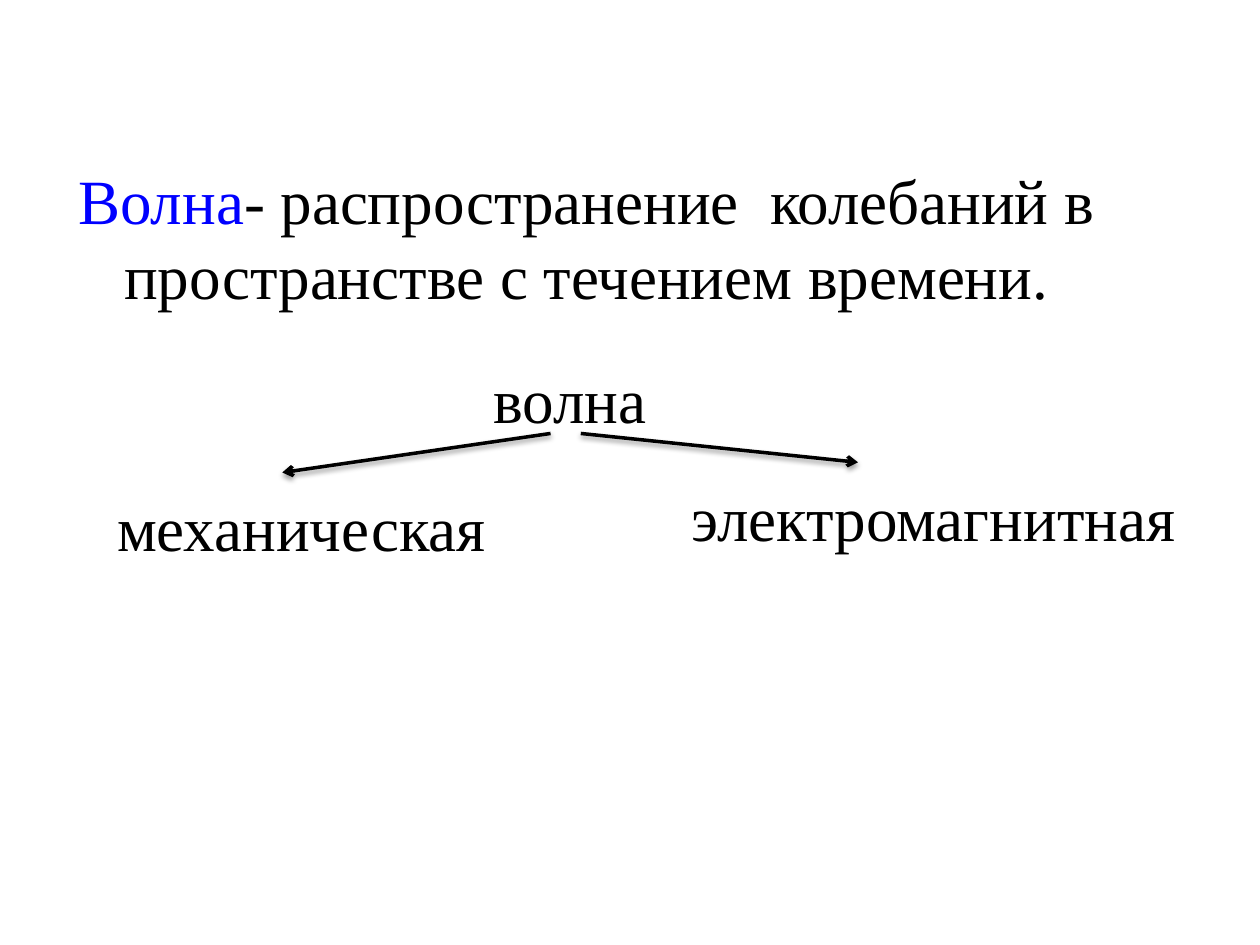
from lxml.etree import SubElement
from pptx import Presentation
from pptx.dml.color import RGBColor
from pptx.enum.shapes import MSO_CONNECTOR
from pptx.enum.text import MSO_AUTO_SIZE, PP_ALIGN
from pptx.oxml.ns import qn
from pptx.util import Pt

BLACK = RGBColor(0, 0, 0)
BLUE = RGBColor(0, 0, 255)
FONT = "Times New Roman"

# Content: runs of the definition, words of the tree, arrows
MEANING = [("Волна", BLUE),
           ("- распространение  колебаний в пространстве с течением времени.", BLACK)]
WORDS = [
    ("волна", (275, 202.3, 103, 51)),
    ("механическая", (59.8, 275.8, 227.5, 51)),
    ("электромагнитная", (388, 270, 293.8, 51)),
]
ARROWS = [((314.6, 247.7), (161.3, 270)), ((331.9, 247.7), (490.3, 264.2))]


def add_text(slide, runs, box, align=PP_ALIGN.LEFT, wrap=False, size=36):
    frame = slide.shapes.add_textbox(*map(Pt, box)).text_frame
    frame.word_wrap = wrap
    frame.auto_size = MSO_AUTO_SIZE.SHAPE_TO_FIT_TEXT
    para = frame.paragraphs[0]
    para.alignment = align
    for text, color in runs:
        run = para.add_run()
        run.text = text
        run.font.name = FONT
        run.font.size = Pt(size)
        run.font.color.rgb = color


def add_arrow(slide, start, end):
    line = slide.shapes.add_connector(
        MSO_CONNECTOR.STRAIGHT, *map(Pt, start + end))
    line.line.color.rgb = BLACK
    line.line.width = Pt(2)
    SubElement(line.line._get_or_add_ln(), qn("a:tailEnd"), type="arrow")
    # Soft shadow straight below the line
    effects = SubElement(line._element.spPr, qn("a:effectLst"))
    shadow = SubElement(effects, qn("a:outerShdw"), blurRad=str(Pt(3.1)),
                        dist=str(Pt(1.6)), dir="5400000", rotWithShape="0")
    color = SubElement(shadow, qn("a:srgbClr"), val=str(BLACK))
    SubElement(color, qn("a:alpha"), val="38000")


def main():
    deck = Presentation()
    deck.slide_width, deck.slide_height = Pt(720), Pt(540)
    slide = deck.slides.add_slide(deck.slide_layouts[6])

    # Definition
    add_text(slide, MEANING, (14.4, 88.6, 641.5, 94.3),
             align=PP_ALIGN.CENTER, wrap=True)

    # Kinds of wave
    for word, box in WORDS:
        add_text(slide, [(word, BLACK)], box)
    for start, end in ARROWS:
        add_arrow(slide, start, end)

    deck.save("out.pptx")


if __name__ == "__main__":
    main()
